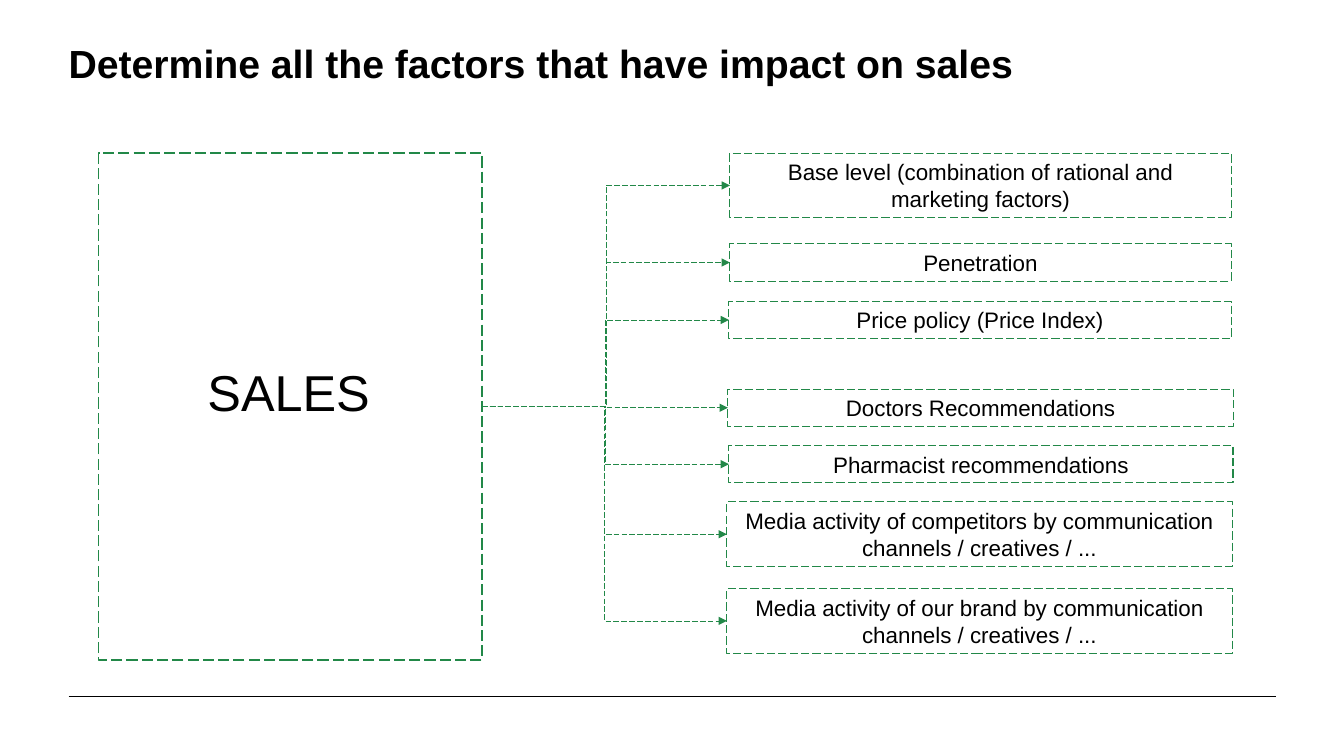
from lxml import etree
from pptx import Presentation
from pptx.dml.color import RGBColor
from pptx.enum import dml, shapes, text
from pptx.oxml import ns
from pptx.util import Inches, Pt

GREEN = RGBColor(0x22, 0x88, 0x48)
BLACK = RGBColor(0, 0, 0)

# Wording, left, top, width, height
FACTORS = [
    ("Base level (combination of rational and marketing factors)", 7.24, 1.52, 4.97, 0.64),
    ("Penetration", 7.24, 2.42, 4.97, 0.37),
    ("Price policy (Price Index)", 7.23, 2.99, 4.98, 0.37),
    ("Doctors Recommendations", 7.22, 3.86, 5.01, 0.37),
    ("Pharmacist recommendations", 7.23, 4.42, 5, 0.37),
    ("Media activity of competitors by communication channels / creatives / ...",
     7.21, 4.98, 5.01, 0.64),
    ("Media activity of our brand by communication channels / creatives / ...",
     7.21, 5.84, 5.01, 0.64),
]


def write(sp, wording, size, bold=False, align=text.PP_ALIGN.LEFT,
          anchor=text.MSO_ANCHOR.TOP, margins=(0.1, 0.05), wrap=True):
    tf = sp.text_frame
    tf.word_wrap = wrap
    tf.vertical_anchor = anchor
    tf.margin_left = tf.margin_right = Inches(margins[0])
    tf.margin_top = tf.margin_bottom = Inches(margins[1])
    p = tf.paragraphs[0]
    p.alignment = align
    r = p.add_run()
    r.text = wording
    r.font.name = "Arial"
    r.font.size = Pt(size)
    r.font.bold = bold
    r.font.color.rgb = BLACK


def add_label(s, wording, left, top, width, height, size, **fmt):
    sp = s.shapes.add_textbox(Inches(left), Inches(top), Inches(width), Inches(height))
    write(sp, wording, size, **fmt)


def style_line(line, color, width, dashed=True):
    line.color.rgb = color
    line.width = Pt(width)
    if dashed:
        line.dash_style = dml.MSO_LINE.LONG_DASH


def add_dashed_box(s, left, top, width, height, line_width):
    sp = s.shapes.add_shape(shapes.MSO_SHAPE.RECTANGLE, Inches(left), Inches(top),
                            Inches(width), Inches(height))
    sp.shadow.inherit = False
    sp.fill.background()
    style_line(sp.line, GREEN, line_width)
    return sp


def add_line(s, kind, x1, y1, x2, y2):
    cx = s.shapes.add_connector(kind, Inches(x1), Inches(y1), Inches(x2), Inches(y2))
    etree.SubElement(cx._element.spPr, ns.qn("a:effectLst"))
    return cx


def add_branch(s, source, target):
    cx = add_line(s, shapes.MSO_CONNECTOR.ELBOW, 0, 0, 1, 1)
    cx.begin_connect(source, 3)
    cx.end_connect(target, 1)
    style_line(cx.line, GREEN, 0.5)
    etree.SubElement(cx.line._get_or_add_ln(), ns.qn("a:tailEnd"), type="triangle")


def main():
    prs = Presentation()
    prs.slide_width, prs.slide_height = Inches(13.33), Inches(7.5)
    s = prs.slides.add_slide(prs.slide_layouts[6])

    # Footer rule and title
    rule = add_line(s, shapes.MSO_CONNECTOR.STRAIGHT, 0.68, 6.91, 12.66, 6.91)
    style_line(rule.line, BLACK, 0.25, dashed=False)
    add_label(s, "Determine all the factors that have impact on sales",
              0.68, 0.39, 11.08, 1.17, 28, bold=True, margins=(0, 0))

    # Sales
    sales = add_dashed_box(s, 0.98, 1.52, 3.8, 5.03, 1)
    add_label(s, "SALES", 1.96, 3.53, 1.83, 0.71, 36, wrap=False)

    # Factors, each joined to sales
    for wording, *place in FACTORS:
        factor = add_dashed_box(s, *place, 0.75)
        write(factor, wording, 16, align=text.PP_ALIGN.CENTER,
              anchor=text.MSO_ANCHOR.MIDDLE, margins=(0.08, 0.05))
        add_branch(s, sales, factor)

    prs.save("out.pptx")


if __name__ == "__main__":
    main()
